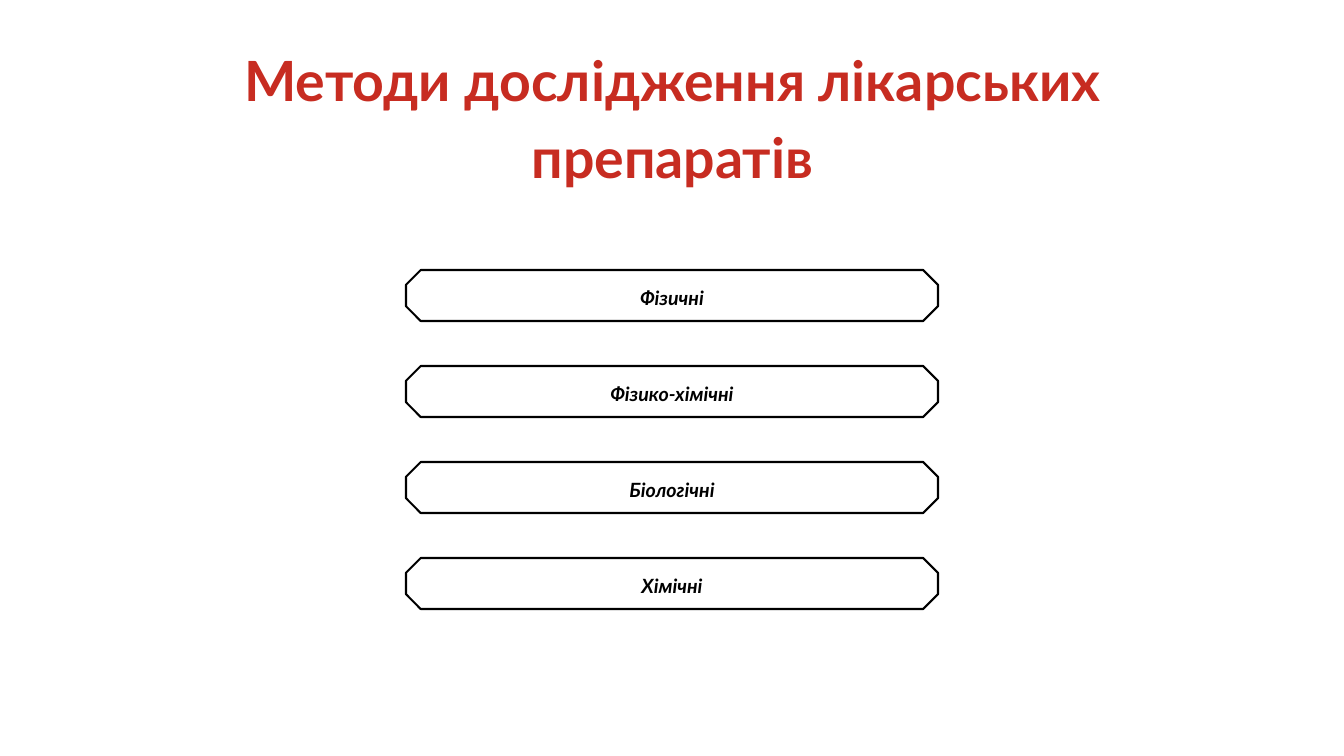
from pptx import Presentation
from pptx.dml.color import RGBColor
from pptx.enum.shapes import MSO_SHAPE as Shape
from pptx.enum.text import MSO_ANCHOR as Anchor, MSO_AUTO_SIZE as AutoSize, PP_ALIGN as Align
from pptx.util import Emu, Pt

TITLE = "Методи дослідження лікарських препаратів"
METHODS = ["Фізичні", "Фізико-хімічні", "Біологічні", "Хімічні"]

RED = RGBColor(0xC7, 0x2C, 0x21)
BLACK = RGBColor(0, 0, 0)
WHITE = RGBColor(255, 255, 255)
FONT = "Lato"

EMU_PER_PX = 914400 / 100.8
SLIDE_W, SLIDE_H = 1344, 756
TITLE_BOX = (93, 40, 1159, 146)
METHOD_W, METHOD_H = 532, 51
METHOD_TOP, METHOD_STEP = 270, 96
CORNER = 0.29


def px(n):
    return Emu(round(n * EMU_PER_PX))


def write(shape, text, size, color=BLACK, italic=False, anchor=Anchor.TOP):
    tf = shape.text_frame
    tf.word_wrap = True
    tf.auto_size = AutoSize.NONE
    tf.vertical_anchor = anchor
    p = tf.paragraphs[0]
    p.alignment = Align.CENTER
    p.line_spacing = 1.15
    p.space_before = Pt(0)
    p.space_after = Pt(10)
    r = p.add_run()
    r.text = text
    r.font.name = FONT
    r.font.size = Pt(size)
    r.font.bold = True
    r.font.italic = italic
    r.font.color.rgb = color


prs = Presentation()
prs.slide_width, prs.slide_height = px(SLIDE_W), px(SLIDE_H)
s = prs.slides.add_slide(prs.slide_layouts[5])

title = s.shapes.title
title.left, title.top, title.width, title.height = map(px, TITLE_BOX)
write(title, TITLE, 39.6, color=RED, anchor=Anchor.MIDDLE)

left = (SLIDE_W - METHOD_W) // 2
for i, method in enumerate(METHODS):
    box = (left, METHOD_TOP + i * METHOD_STEP, METHOD_W, METHOD_H)
    sp = s.shapes.add_shape(Shape.OCTAGON, *map(px, box))
    sp.adjustments[0] = CORNER
    sp.shadow.inherit = False
    sp.fill.solid()
    sp.fill.fore_color.rgb = WHITE
    sp.line.color.rgb = BLACK
    sp.line.width = Pt(1.5)
    write(sp, method, 14, italic=True)

prs.save("out.pptx")
